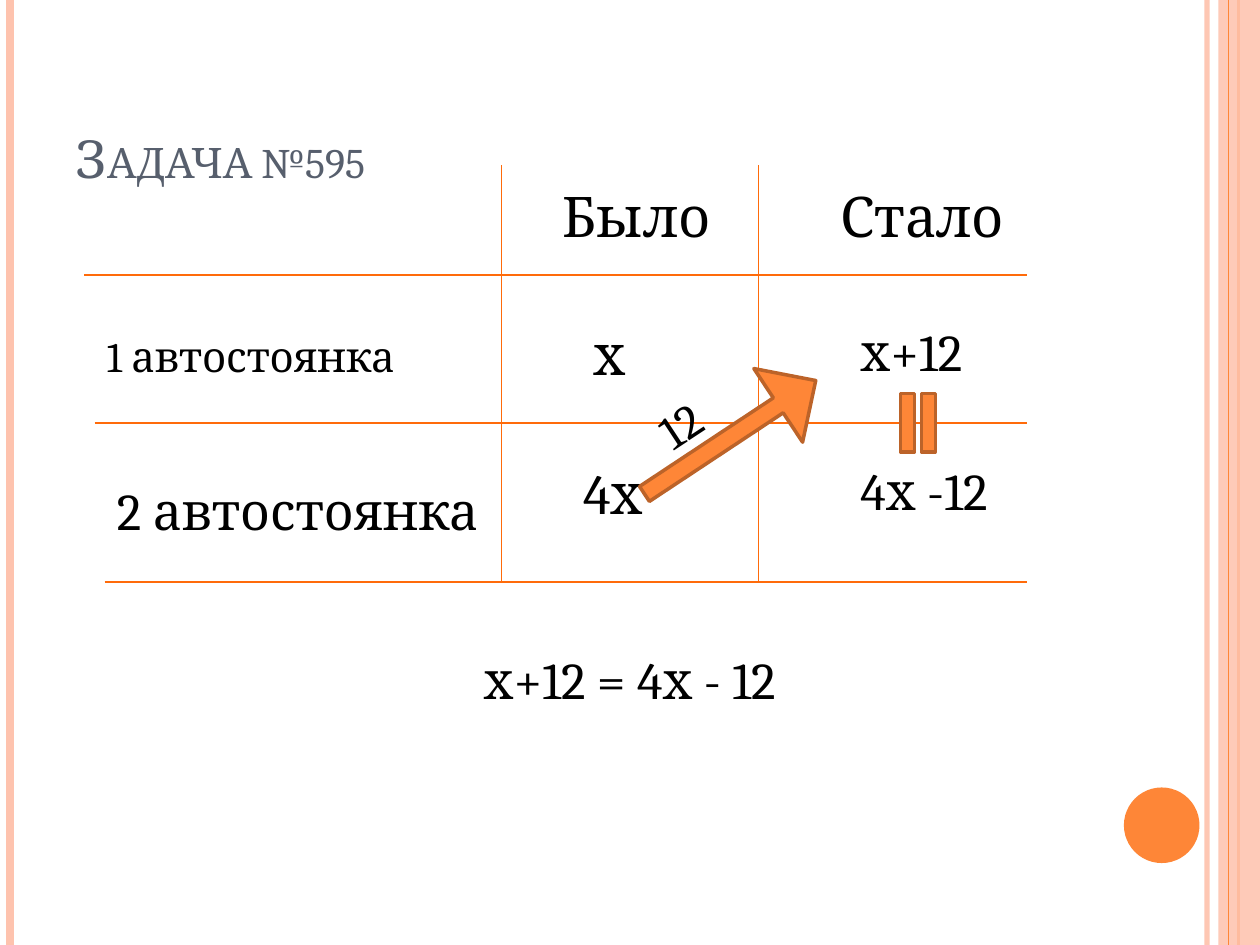
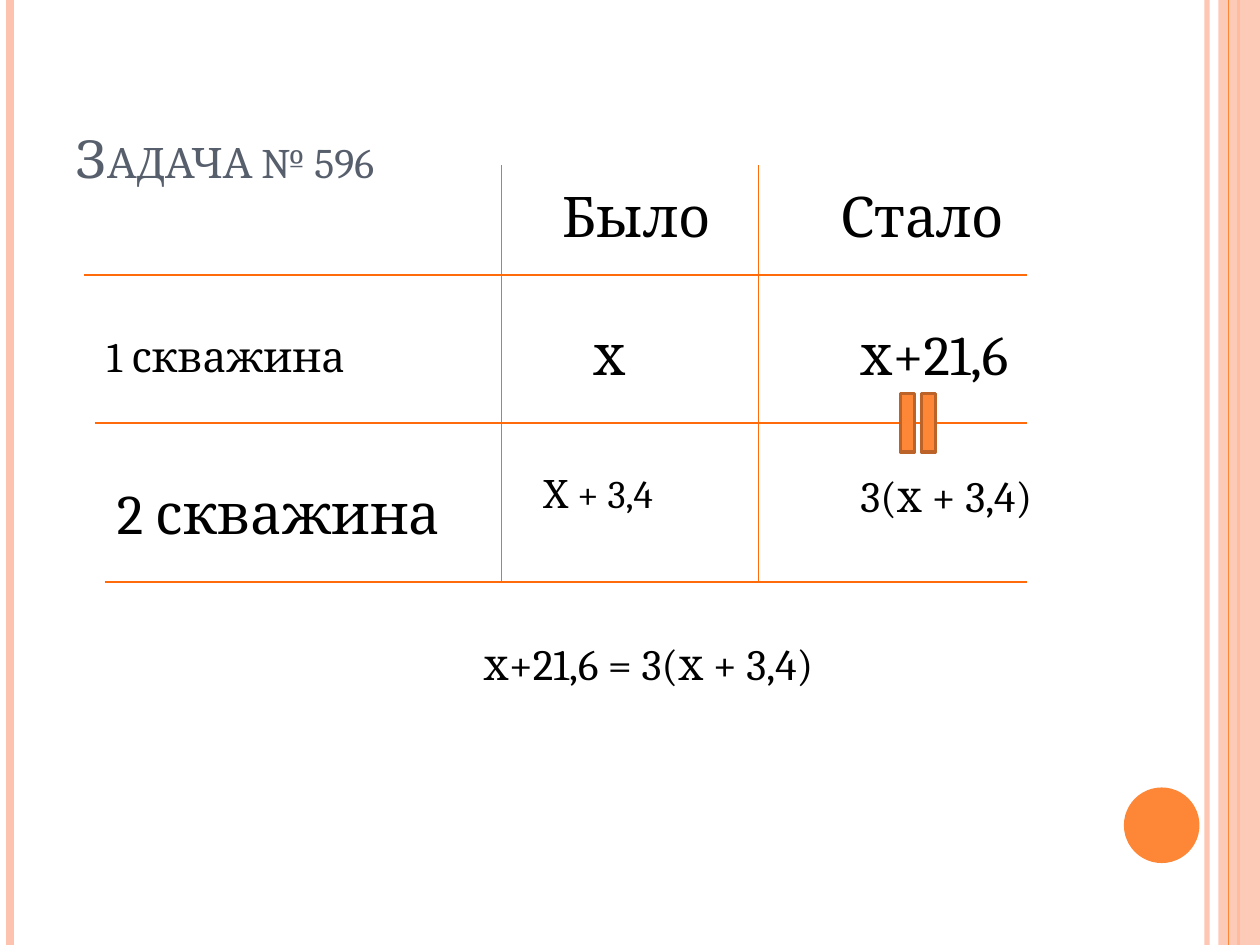
from dataclasses import dataclass

from lxml import etree
from pptx import Presentation
from pptx import util as u
from pptx.dml.color import RGBColor
from pptx.enum import shapes, text
from pptx.oxml.ns import qn
from pptx.shapes.base import BaseShape
from pptx.slide import Slide

FONT = "Cambria"
ORANGE, PEACH, RUST, RULE = "FE8637", "FEC3AE", "BC6329", "FF6B0A"
SLATE, BLACK = "575F6D", "000000"
PAGE_WIDTH, PAGE_HEIGHT = 10, 7.5
COLUMN_LEFT, COLUMN_RIGHT = 3.98, 6.02
GRID_TOP, GRID_BOTTOM, GRID_RIGHT = 1.31, 4.62, 8.15
ROW_HEIGHT = 0.71


@dataclass(frozen=True)
class Rule:
    start: tuple[float, float]
    end: tuple[float, float]
    color: str = RULE
    width: float = 1
    opacity: int = 100


@dataclass(frozen=True)
class Figure:
    kind: shapes.MSO_SHAPE
    frame: tuple[float, float, float, float]
    fill: str = ORANGE
    outline: str | None = None
    opacity: int = 100
    rotation: float = 0
    adjustments: tuple[float, ...] = ()


@dataclass(frozen=True)
class Label:
    words: str
    left: float
    top: float
    width: float
    size: float = 32
    height: float = ROW_HEIGHT
    color: str = BLACK
    spacing: float = 1
    rotation: float = 0
    hanging: float = 0.38
    before: float = 0.2
    title: bool = False


@dataclass(frozen=True)
class Problem:
    labels: tuple[Label, ...]
    figures: tuple[Figure, ...]


def vertical(x: float, color: str, width: float, opacity: int = 100) -> Rule:
    return Rule((x, 0), (x, PAGE_HEIGHT), color, width, opacity)


def heading(words: str) -> Label:
    return Label(words, 0.5, 0.3, 8.17, 30, 1.25, SLATE,
                 hanging=0, before=0, title=True)


def first_row(words: str) -> Label:
    return Label(words, 0.75, 2.57, 3.07, 24, hanging=0.3, before=0.25)


FRAME_LEFT = (
    vertical(9.58, PEACH, 3, 93),
    vertical(0.08, PEACH, 4.5),
    vertical(9.83, ORANGE, 1.5),
)
SIDE_BAND = Figure(shapes.MSO_SHAPE.RECTANGLE, (9.67, 0, 0.33, PAGE_HEIGHT),
                   PEACH, opacity=87)
BAND_LINE = vertical(9.75, ORANGE, 0.75)
PAGE_DOT = Figure(shapes.MSO_SHAPE.OVAL, (8.92, 6.25, 0.6, 0.6))
GRID = tuple(
    Rule((left, y), (GRID_RIGHT, y))
    for left, y in ((0.67, 2.18), (0.75, 3.36), (0.83, GRID_BOTTOM))
) + tuple(
    Rule((x, GRID_TOP), (x, GRID_BOTTOM)) for x in (COLUMN_LEFT, COLUMN_RIGHT)
)
SHARED_LABELS = (
    Label("Было", 4.37, 1.39, 1.97),
    Label("Стало", 6.57, 1.39, 1.97),
    Label("х", 4.61, 2.49, 0.71),
)
EQUALS = Figure(shapes.MSO_SHAPE.MATH_EQUAL, (6.97, 3.12, 0.63, 0.47),
                outline=RUST, rotation=90)
TRANSFER_ARROW = Figure(shapes.MSO_SHAPE.RIGHT_ARROW, (4.98, 3.12, 1.63, 0.7),
                        outline=RUST, rotation=326.5,
                        adjustments=(0.203, 0.509))

PROBLEMS = (
    Problem(
        (
            heading("Задача №595"),
            first_row("1 автостоянка"),
            Label("2 автостоянка", 0.83, 3.75, 3.07, 29.6),
            Label("4х", 4.53, 3.59, 0.71),
            Label("х+12", 6.73, 2.49, 1.18, 29.6),
            Label("4х -12", 6.73, 3.59, 1.42, 29.6),
            Label("12", 5.15, 3.12, 0.71, 27.2, 0.47,
                  spacing=0.8, rotation=326.7),
            Label("х+12 = 4х - 12", 3.74, 5.09, 2.91, 29.6),
        ),
        (TRANSFER_ARROW, EQUALS),
    ),
    Problem(
        (
            heading("Задача № 596"),
            first_row("1 скважина"),
            Label("2 скважина", 0.83, 3.75, 3.07),
            Label("Х + 3,4", 4.21, 3.75, 1.26, 22.4, spacing=0.8),
            Label("х+21,6", 6.73, 2.49, 1.57),
            Label("3(х + 3,4)", 6.73, 3.75, 1.73, 24.8, spacing=0.8),
            Label("х+21,6 = 3(х + 3,4)", 3.74, 5.09, 3.39, 24.8, spacing=0.8),
        ),
        (EQUALS,),
    ),
)


def rgb(color: str) -> RGBColor:
    return RGBColor.from_string(color)


def apply(target: object, values: dict[str, object]) -> None:
    for name, value in values.items():
        setattr(target, name, value)


def inches(*values: float) -> list[u.Length]:
    return [u.Inches(value) for value in values]


def set_opacity(shape: BaseShape, percent: int) -> None:
    if percent < 100:
        for color in list(shape._element.spPr.iter(qn("a:srgbClr"))):
            etree.SubElement(color, qn("a:alpha"), val=str(percent * 1000))


def draw_rule(page: Slide, rule: Rule) -> None:
    line = page.shapes.add_connector(
        shapes.MSO_CONNECTOR.STRAIGHT, *inches(*rule.start, *rule.end))
    line.line.color.rgb = rgb(rule.color)
    line.line.width = u.Pt(rule.width)
    etree.SubElement(line._element.spPr, qn("a:effectLst"))
    set_opacity(line, rule.opacity)


def draw_figure(page: Slide, figure: Figure) -> None:
    shape = page.shapes.add_shape(figure.kind, *inches(*figure.frame))
    shape.shadow.inherit = False
    shape.rotation = figure.rotation
    shape.fill.solid()
    shape.fill.fore_color.rgb = rgb(figure.fill)
    if figure.outline:
        shape.line.color.rgb = rgb(figure.outline)
        shape.line.width = u.Pt(2)
    else:
        shape.line.fill.background()
    for index, value in enumerate(figure.adjustments):
        shape.adjustments[index] = value
    set_opacity(shape, figure.opacity)


def draw_label(page: Slide, label: Label) -> None:
    box = page.shapes.add_textbox(
        *inches(label.left, label.top, label.width, label.height))
    box.rotation = label.rotation
    anchor = text.MSO_ANCHOR.BOTTOM if label.title else text.MSO_ANCHOR.TOP
    apply(box.text_frame, {"word_wrap": True, "vertical_anchor": anchor})
    para = box.text_frame.paragraphs[0]
    apply(para, {
        "alignment": text.PP_ALIGN.LEFT,
        "line_spacing": label.spacing,
        "space_before": u.Pt(label.size * label.before),
    })
    indent = u.Inches(label.hanging)
    properties = para._p.get_or_add_pPr()
    properties.set("marL", str(indent))
    properties.set("indent", str(-indent))
    span = para.add_run()
    span.text = label.words
    apply(span.font, {"name": FONT, "size": u.Pt(label.size)})
    span.font.color.rgb = rgb(label.color)
    if label.title:
        span._r.get_or_add_rPr().set("cap", "small")


def draw_frame(page: Slide) -> None:
    for rule in FRAME_LEFT:
        draw_rule(page, rule)
    draw_figure(page, SIDE_BAND)
    draw_rule(page, BAND_LINE)
    draw_figure(page, PAGE_DOT)


def draw_problem(page: Slide, problem: Problem) -> None:
    draw_frame(page)
    for rule in GRID:
        draw_rule(page, rule)
    for label in SHARED_LABELS + problem.labels:
        draw_label(page, label)
    for figure in problem.figures:
        draw_figure(page, figure)


def main() -> None:
    deck = Presentation()
    apply(deck, {"slide_width": u.Inches(PAGE_WIDTH),
                 "slide_height": u.Inches(PAGE_HEIGHT)})
    for problem in PROBLEMS:
        draw_problem(deck.slides.add_slide(deck.slide_layouts[6]), problem)
    deck.save("out.pptx")


if __name__ == "__main__":
    main()
